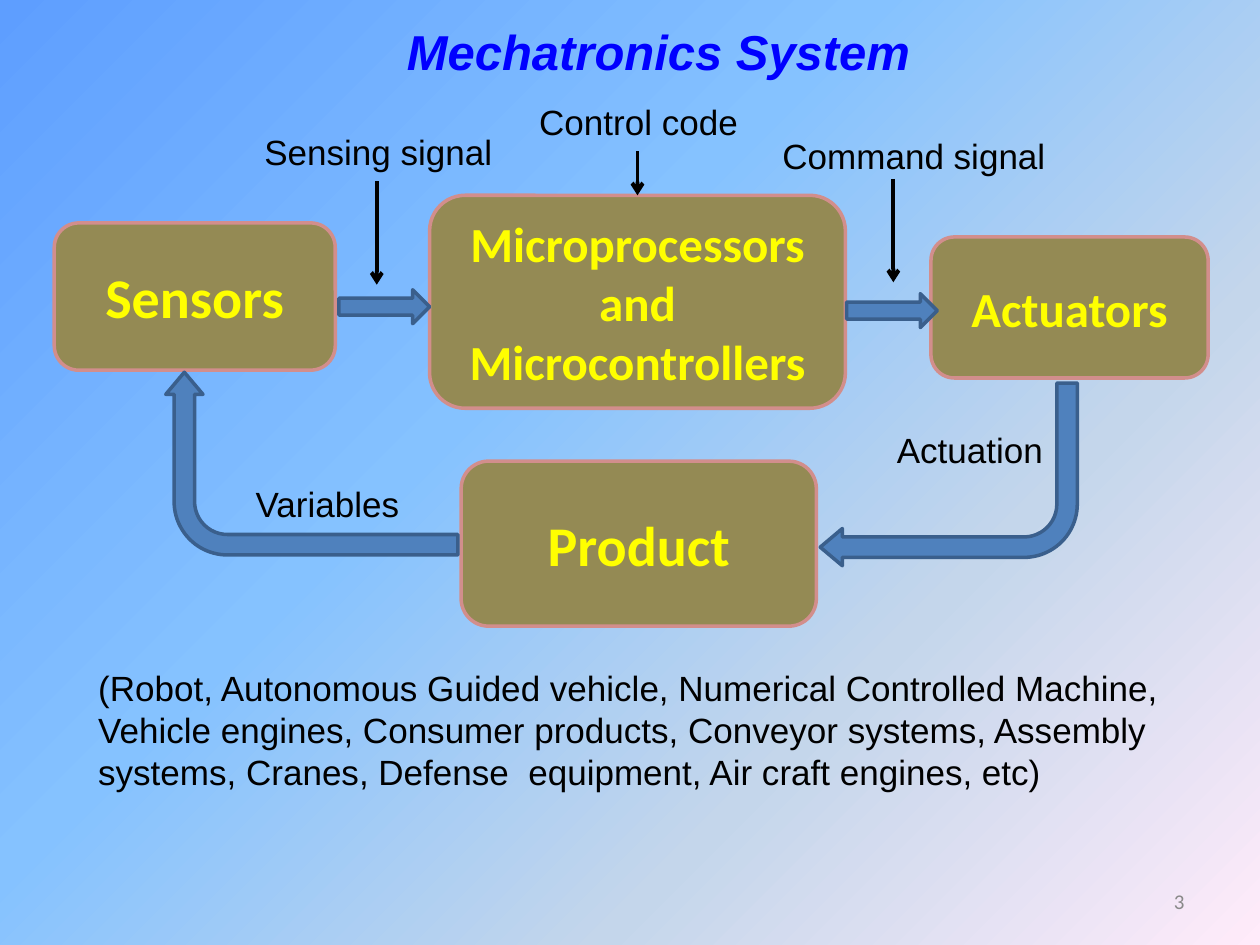
from lxml import etree
from pptx import Presentation
from pptx.dml.color import RGBColor
from pptx.enum import shapes, text
from pptx.oxml import ns
from pptx.util import Pt

COLORS = {
    "box": "948A54", "box_line": "D28E8C", "box_text": "FFFF00",
    "arrow": "4F81BD", "arrow_line": "3A5F8C",
    "title": "0000FF", "black": "000000", "number": "898989",
}
BACKGROUND = [(0, "5E9EFF"), (40, "85C2FF"), (70, "C4D6EB"), (100, "FFEBFA")]
BENT = (0.112, 0.102, 0.121, 0.292)
LABEL_HEIGHT = 31.7
ARROW_SIZE = (51.8, 19.4)


def color(name):
    return RGBColor.from_string(COLORS[name])


def paint_background(slide):
    fill = slide.background.fill
    fill.gradient()
    fill.gradient_angle = 315
    stops = slide.element.find(".//" + ns.qn("a:gsLst"))
    for stop in list(stops):
        stops.remove(stop)
    for position, value in BACKGROUND:
        stop = etree.SubElement(stops, ns.qn("a:gs"), pos=str(position * 1000))
        etree.SubElement(stop, ns.qn("a:srgbClr"), val=value)


def write(paragraph, words, size, name, font="Arial", bold=False, italic=False):
    run = paragraph.add_run()
    run.text = words
    run.font.name = font
    run.font.size = Pt(size)
    run.font.bold = bold
    run.font.italic = italic
    run.font.color.rgb = color(name)


def add_text(slide, frame, paragraphs, size=20, name="black", align=text.PP_ALIGN.LEFT,
             anchor=text.MSO_ANCHOR.TOP, **style):
    text_frame = slide.shapes.add_textbox(*map(Pt, frame)).text_frame
    text_frame.word_wrap = True
    text_frame.vertical_anchor = anchor
    for index, words in enumerate(paragraphs):
        paragraph = text_frame.add_paragraph() if index else text_frame.paragraphs[0]
        paragraph.alignment = align
        write(paragraph, words, size, name, **style)


def add_filled(slide, kind, frame, fill, line):
    shape = slide.shapes.add_shape(kind, *map(Pt, frame))
    shape.shadow.inherit = False
    shape.fill.solid()
    shape.fill.fore_color.rgb = color(fill)
    shape.line.color.rgb = color(line)
    shape.line.width = Pt(2)
    return shape


def add_box(slide, frame, words, size):
    shape = add_filled(slide, shapes.MSO_SHAPE.ROUNDED_RECTANGLE, frame, "box", "box_line")
    shape.text_frame.word_wrap = True
    shape.text_frame.vertical_anchor = text.MSO_ANCHOR.MIDDLE
    paragraph = shape.text_frame.paragraphs[0]
    paragraph.alignment = text.PP_ALIGN.CENTER
    write(paragraph, words, size, "box_text", font="Calibri", bold=True)
    return shape


def add_block_arrow(slide, left, top):
    add_filled(slide, shapes.MSO_SHAPE.RIGHT_ARROW, (left, top, *ARROW_SIZE),
               "arrow", "arrow_line")


def add_bent_arrow(slide, frame, rotation):
    shape = add_filled(slide, shapes.MSO_SHAPE.BENT_ARROW, frame, "arrow", "arrow_line")
    shape.rotation = rotation
    for index, value in enumerate(BENT):
        shape.adjustments[index] = value


def add_pointer(slide, x, top, bottom):
    connector = slide.shapes.add_connector(
        shapes.MSO_CONNECTOR.STRAIGHT, Pt(x), Pt(top), Pt(x), Pt(bottom))
    connector.line.color.rgb = color("black")
    connector.line.width = Pt(2.25)
    properties = connector.element.spPr
    etree.SubElement(properties.find(ns.qn("a:ln")), ns.qn("a:tailEnd"), type="arrow")
    etree.SubElement(properties, ns.qn("a:effectLst"))
    return connector


def main():
    presentation = Presentation()
    presentation.slide_width, presentation.slide_height = Pt(720), Pt(540)
    slide = presentation.slides.add_slide(presentation.slide_layouts[6])
    paint_background(slide)

    # Slide number and title
    add_text(slide, (516.2, 500.4, 167.8, 28.8), ["3"], 12, "number",
             text.PP_ALIGN.RIGHT, text.MSO_ANCHOR.MIDDLE, font="Calibri")
    add_text(slide, (225.4, 8.6, 334, 41), ["Mechatronics System"], 28, "title",
             bold=True, italic=True)

    # Parts of the system
    add_box(slide, (532, 135.4, 158.4, 80.6), "Actuators", 28)
    controller = add_box(slide, (245.5, 111.6, 237.6, 121.7),
                         "Microprocessors and Microcontrollers", 28)
    add_box(slide, (31, 127.4, 160.6, 84.2), "Sensors", 32)
    add_box(slide, (263.5, 263.5, 203, 94.3), "Product", 32)

    # Examples of products
    add_text(slide, (49, 377.3, 649.4, 80), [
        "(Robot, Autonomous Guided vehicle, Numerical Controlled Machine,",
        "Vehicle engines, Consumer products, Conveyor systems, Assembly systems, "
        "Cranes, Defense  equipment, Air craft engines, etc)",
    ])

    # Flow around the loop
    add_block_arrow(slide, 193.7, 165.6)
    add_block_arrow(slide, 483.8, 167.8)
    add_bent_arrow(slide, (468.7, 218.9, 146.9, 104.4), 180)
    add_bent_arrow(slide, (126, 181.4, 104.4, 167), 270)

    # Signal labels
    for words, left, top, width in [
        ("Sensing signal", 144, 71.3, 160),
        ("Command signal", 440, 73.4, 183.6),
        ("Actuation", 505.4, 241.2, 103),
        ("Variables", 139, 272.2, 100.8),
        ("Control code", 301, 54, 131),
    ]:
        add_text(slide, (left, top, width, LABEL_HEIGHT), [words])

    # Pointers from labels to the flow
    add_pointer(slide, 510.5, 102.2, 161.3)
    add_pointer(slide, 215.3, 103.7, 162.7)
    add_pointer(slide, 364.3, 86.4, 111.6).end_connect(controller, 0)

    presentation.save("out.pptx")


if __name__ == "__main__":
    main()
